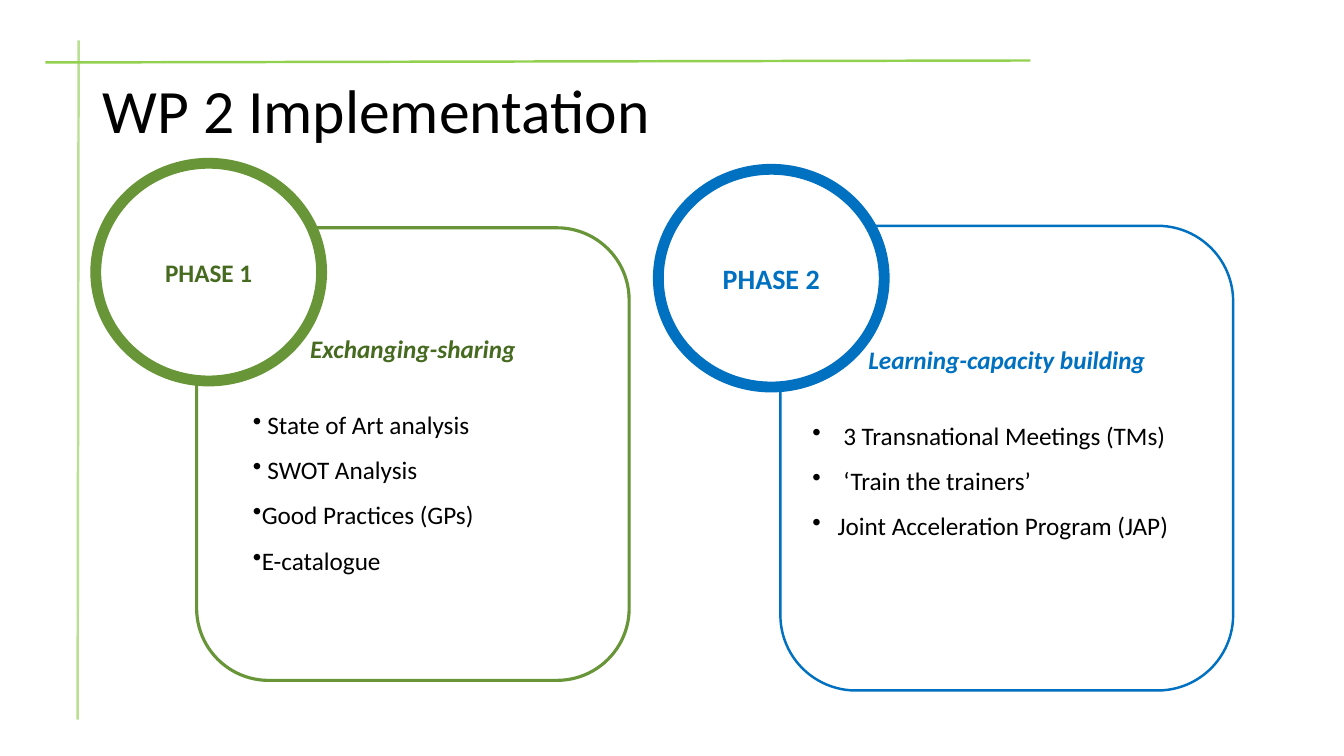
"""Build the WP 2 Implementation slide with its two phase cards."""
import dataclasses

import lxml.etree
import pptx
import pptx.dml.color
import pptx.enum.shapes
import pptx.enum.text
import pptx.oxml.ns
import pptx.util

Inches = pptx.util.Inches
Pt = pptx.util.Pt
Align = pptx.enum.text.PP_ALIGN
Preset = pptx.enum.shapes.MSO_SHAPE
Area = tuple[float, float, float, float]


@dataclasses.dataclass(frozen=True)
class Rule:
    start: tuple[float, float]
    end: tuple[float, float]
    color: str


@dataclasses.dataclass(frozen=True)
class Phase:
    label: str
    label_size: int
    heading: str
    items: tuple[str, ...]
    card: Area
    circle: Area
    line_color: str
    text_color: str
    card_line: float
    margin: float
    indent: float
    bottom_inset: float


RULES = (
    Rule((0.78, 0.4), (0.77, 7.14), "B9DF93"),
    Rule((0.45, 0.62), (10.22, 0.6), "92D050"),
)
PHASES = (
    Phase("PHASE 1", 18, "Exchanging-sharing",
          (" State of Art analysis", " SWOT Analysis", "Good Practices (GPs)", "E-catalogue"),
          (1.95, 2.26, 4.29, 4.49), (0.95, 1.62, 2.24, 2.16),
          "679537", "466B20", 2.25, 0, 0.25, 0.05),
    Phase("PHASE 2", 20, "Learning-capacity building",
          (" 3 Transnational Meetings (TMs)", " ‘Train the trainers’",
           "Joint Acceleration Program (JAP)"),
          (7.74, 2.24, 4.49, 4.61), (6.53, 1.68, 2.24, 2.16),
          "0070C0", "0070C0", 1.75, 0.25, -0.25, 0.36),
)


def rgb(color: str) -> pptx.dml.color.RGBColor:
    """Turn a hex string into a colour."""
    return pptx.dml.color.RGBColor.from_string(color)


def apply(target: object, values: dict) -> None:
    """Set each named attribute on the target."""
    for name, value in values.items():
        setattr(target, name, value)


def write(para, text: str, color: str, size: int, **style: bool) -> None:
    """Add one formatted span to a paragraph."""
    span = para.add_run()
    span.text = text
    apply(span.font, {"name": "Calibri", "size": Pt(size), **style})
    span.font.color.rgb = rgb(color)


def add_bullet(para, margin: float, indent: float) -> None:
    """Give a paragraph a round bullet and its indents."""
    properties = para._p.get_or_add_pPr()
    properties.set("marL", str(Inches(margin)))
    properties.set("indent", str(Inches(indent)))
    bullet = lxml.etree.SubElement(properties, pptx.oxml.ns.qn("a:buChar"))
    bullet.set("char", "•")


def draw_rule(page, rule: Rule) -> None:
    """Draw one straight rule without a shadow."""
    line = page.shapes.add_connector(
        pptx.enum.shapes.MSO_CONNECTOR.STRAIGHT,
        *map(Inches, rule.start + rule.end))
    line.line.color.rgb = rgb(rule.color)
    line.line.width = Pt(1.75)
    lxml.etree.SubElement(line._element.spPr, pptx.oxml.ns.qn("a:effectLst"))


def draw_title(page, text: str) -> None:
    """Draw the slide title."""
    box = page.shapes.add_textbox(*map(Inches, (0.92, 0.4, 11.5, 1.45)))
    apply(box.text_frame, {"word_wrap": True,
                           "vertical_anchor": pptx.enum.text.MSO_ANCHOR.MIDDLE})
    para = box.text_frame.paragraphs[0]
    para.line_spacing = 0.9
    write(para, text, "000000", 44)


def draw_outline(page, preset, area: Area, color: str, width: float):
    """Draw an outlined shape and return its text frame and fill."""
    shape = page.shapes.add_shape(preset, *map(Inches, area))
    shape.shadow.inherit = False
    shape.line.color.rgb = rgb(color)
    shape.line.width = Pt(width)
    apply(shape.text_frame, {"word_wrap": True,
                             "vertical_anchor": pptx.enum.text.MSO_ANCHOR.MIDDLE})
    return shape.text_frame, shape.fill


def draw_phase(page, phase: Phase) -> None:
    """Draw a phase card with its circle on the corner."""
    frame, fill = draw_outline(page, Preset.ROUNDED_RECTANGLE, phase.card,
                               phase.line_color, phase.card_line)
    fill.background()
    frame.margin_bottom = Inches(phase.bottom_inset)
    heading = frame.paragraphs[0]
    apply(heading, {"alignment": Align.CENTER, "space_after": Pt(22)})
    write(heading, phase.heading, phase.text_color, 18, bold=True, italic=True)
    for item in phase.items:
        para = frame.add_paragraph()
        add_bullet(para, phase.margin, phase.indent)
        apply(para, {"alignment": Align.LEFT, "line_spacing": 1.5})
        write(para, item, "000000", 18)

    frame, fill = draw_outline(page, Preset.OVAL, phase.circle, phase.line_color, 7.75)
    fill.solid()
    fill.fore_color.rgb = rgb("FFFFFF")
    label = frame.paragraphs[0]
    label.alignment = Align.CENTER
    write(label, phase.label, phase.text_color, phase.label_size, bold=True)


def main() -> None:
    """Build and save the deck."""
    deck = pptx.Presentation()
    apply(deck, {"slide_width": Inches(13.33), "slide_height": Inches(7.5)})
    page = deck.slides.add_slide(deck.slide_layouts[6])
    for rule in RULES:
        draw_rule(page, rule)
    draw_title(page, "WP 2 Implementation")
    for phase in PHASES:
        draw_phase(page, phase)
    deck.save("out.pptx")


if __name__ == "__main__":
    main()
